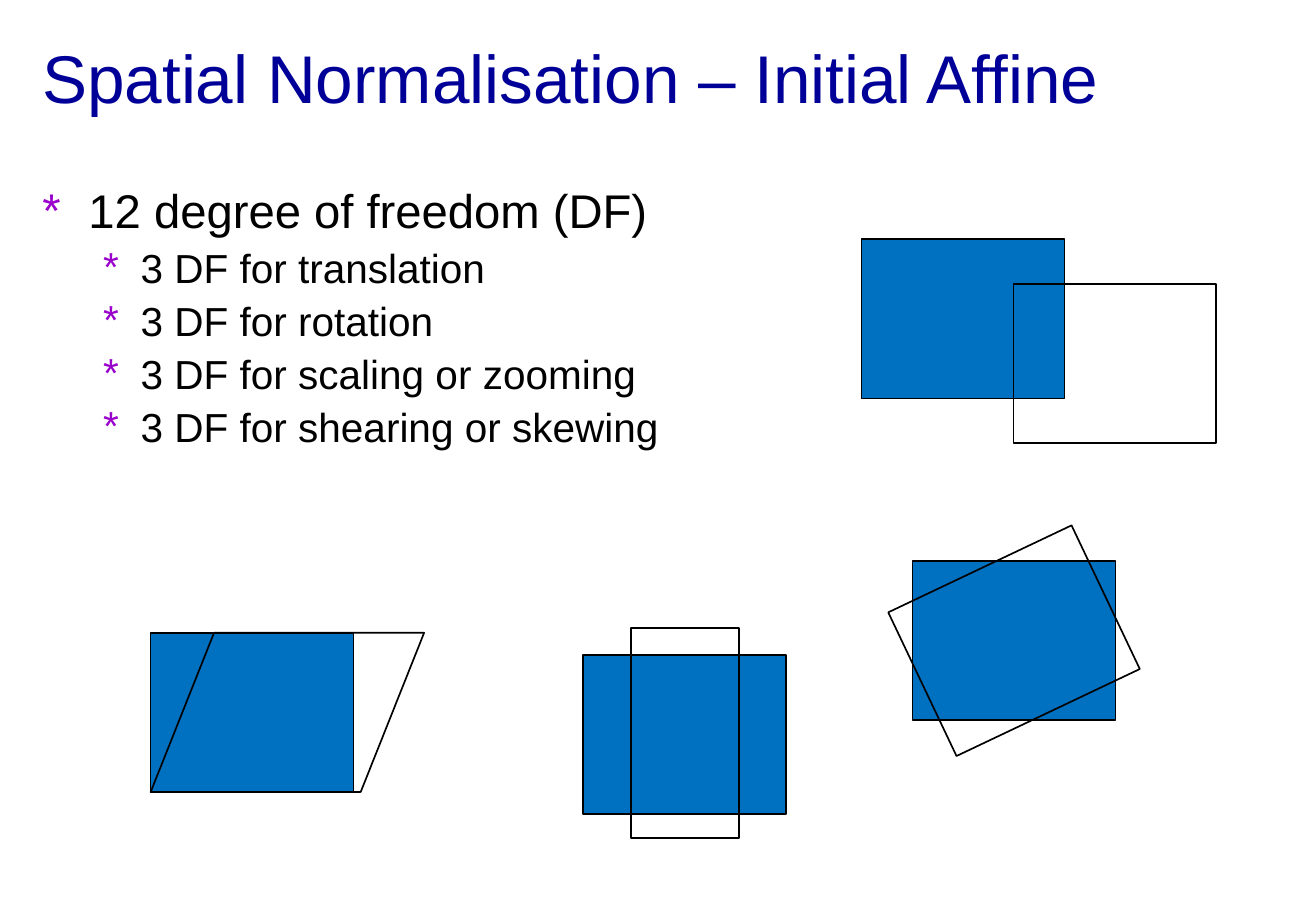
"""Build the slide on the initial affine step of spatial normalisation."""
from typing import NamedTuple, Optional

from lxml import etree
from pptx import Presentation
from pptx import util as u
from pptx.dml.color import RGBColor
from pptx.enum import shapes, text
from pptx.oxml import ns

NAVY = RGBColor(0x00, 0x00, 0x99)
PURPLE = RGBColor(0x99, 0x00, 0xCC)
BLUE = RGBColor(0x00, 0x70, 0xC0)
BLACK = RGBColor(0x00, 0x00, 0x00)
FONT = "Arial"
SQUARE_WIDTH, SQUARE_HEIGHT = 1.67, 1.31
RECTANGLE = shapes.MSO_SHAPE.RECTANGLE
PARALLELOGRAM = shapes.MSO_SHAPE.PARALLELOGRAM


class Level(NamedTuple):
    """Look of one outline level."""
    size: int
    margin: float
    hanging: float
    space_before: float


class Outline(NamedTuple):
    """Transformed outline drawn over a blue block."""
    left: float
    top: float
    width: float = SQUARE_WIDTH
    height: float = SQUARE_HEIGHT
    kind: shapes.MSO_SHAPE = RECTANGLE
    rotation: float = 0
    slant: Optional[float] = None


class Transform(NamedTuple):
    """Blue block and its outline after the transformation."""
    left: float
    top: float
    result: Outline


LEVELS = [Level(28, 0.38, 0.38, 6.4), Level(24, 0.81, 0.31, 5.5)]
FREEDOMS = [
    (0, "12 degree of freedom (DF)"),
    (1, "3 DF for translation"),
    (1, "3 DF for rotation"),
    (1, "3 DF for scaling or zooming"),
    (1, "3 DF for shearing or skewing"),
]
TRANSFORMS = [
    Transform(7.09, 1.97, Outline(8.34, 2.34)),
    Transform(7.51, 4.62, Outline(7.51, 4.62, rotation=334.6)),
    Transform(4.8, 5.39, Outline(5.19, 5.17, 0.89, 1.73)),
    Transform(1.24, 5.21, Outline(1.24, 5.21, 2.25, kind=PARALLELOGRAM, slant=0.398)),
]


def add_frame(slide, top: float, height: float):
    """Add a wrapping, top-anchored text area and return its frame."""
    frame = slide.shapes.add_textbox(
        u.Inches(0.25), u.Inches(top), u.Inches(10.33), u.Inches(height)).text_frame
    frame.word_wrap = True
    frame.vertical_anchor = text.MSO_ANCHOR.TOP
    return frame


def write(paragraph, wording: str, size: int, color: RGBColor) -> None:
    """Fill a paragraph and format its text."""
    paragraph.text = wording
    font = paragraph.runs[0].font
    font.name, font.size, font.color.rgb = FONT, u.Pt(size), color


def add_bullet(paragraph, level: Level) -> None:
    """Give a paragraph a hanging purple asterisk."""
    properties = paragraph._p.get_or_add_pPr()
    properties.set("marL", str(u.Inches(level.margin)))
    properties.set("indent", str(u.Inches(-level.hanging)))
    bullet_color = etree.SubElement(properties, ns.qn("a:buClr"))
    etree.SubElement(bullet_color, ns.qn("a:srgbClr"), val=str(PURPLE))
    etree.SubElement(properties, ns.qn("a:buFont"), typeface=FONT)
    etree.SubElement(properties, ns.qn("a:buChar"), char="*")


def add_freedoms(slide) -> None:
    """Write the list of degrees of freedom."""
    frame = add_frame(slide, 1.5, 5.33)
    for index, (depth, wording) in enumerate(FREEDOMS):
        paragraph = frame.add_paragraph() if index else frame.paragraphs[0]
        level = LEVELS[depth]
        write(paragraph, wording, level.size, BLACK)
        paragraph.level = depth
        paragraph.line_spacing = 0.9
        paragraph.space_before = u.Pt(level.space_before)
        add_bullet(paragraph, level)


def add_outline(slide, outline: Outline, fill: Optional[RGBColor] = None) -> None:
    """Draw one black-edged figure, filled or hollow."""
    figure = slide.shapes.add_shape(
        outline.kind, u.Inches(outline.left), u.Inches(outline.top),
        u.Inches(outline.width), u.Inches(outline.height))
    figure.shadow.inherit = False
    figure.rotation = outline.rotation
    if outline.slant is not None:
        figure.adjustments[0] = outline.slant
    if fill is None:
        figure.fill.background()
    else:
        figure.fill.solid()
        figure.fill.fore_color.rgb = fill
    figure.line.color.rgb = BLACK
    figure.line.width = u.Pt(1)


def main() -> None:
    """Build and save the slide."""
    deck = Presentation()
    deck.slide_width, deck.slide_height = u.Inches(10.83), u.Inches(7.5)
    slide = deck.slides.add_slide(deck.slide_layouts[6])
    title = add_frame(slide, 0.25, 1.25)
    write(title.paragraphs[0], "Spatial Normalisation – Initial Affine", 40, NAVY)
    add_freedoms(slide)
    for transform in TRANSFORMS:
        add_outline(slide, Outline(transform.left, transform.top), BLUE)
        add_outline(slide, transform.result)
    deck.save("out.pptx")


if __name__ == "__main__":
    main()
